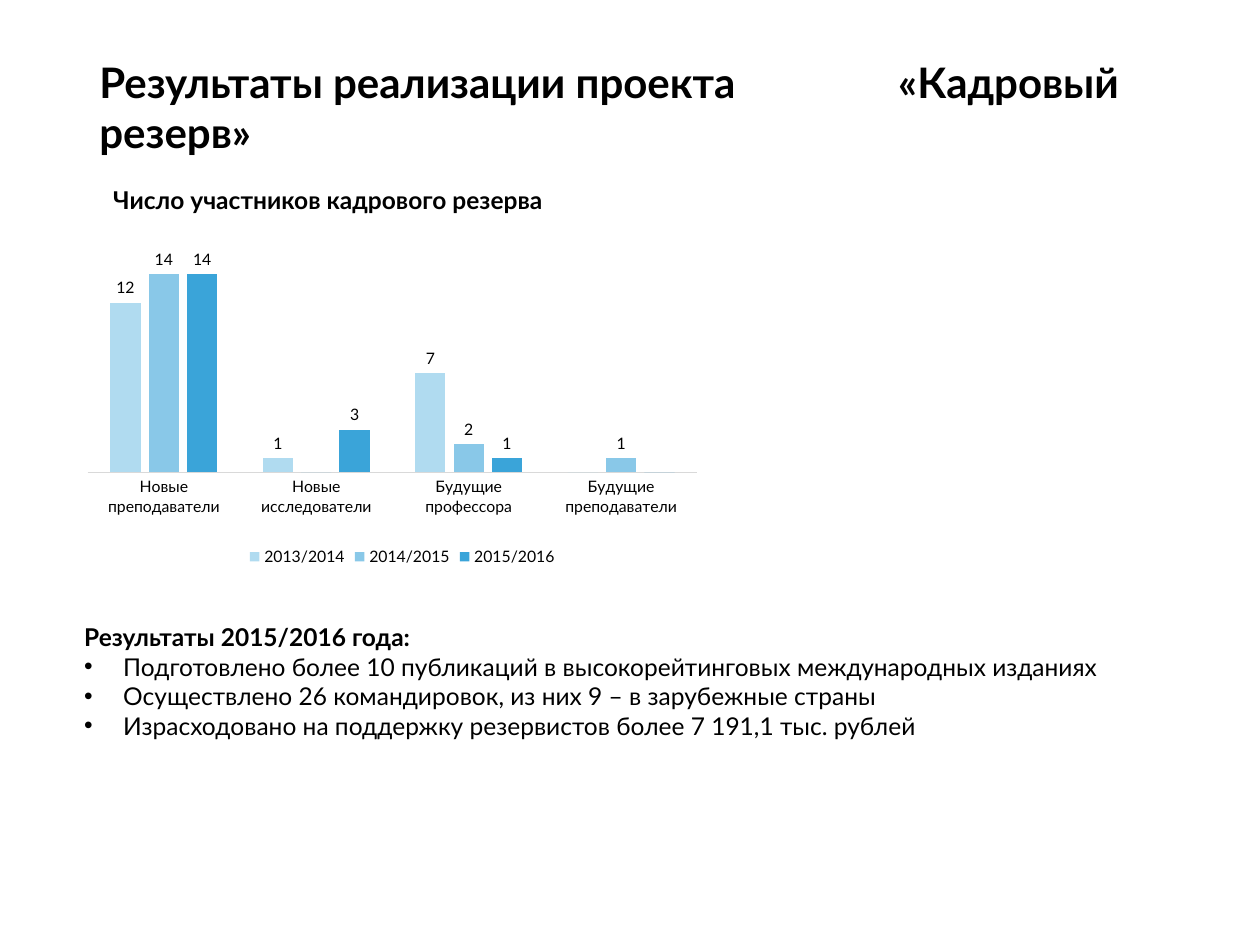
"""Build the slide on the results of the personnel reserve project."""
from pptx import Presentation, util as u
from pptx.chart import data
from pptx.dml.color import RGBColor
from pptx.enum import chart as ch, text as tx
from pptx.oxml import parse_xml
from pptx.oxml.ns import nsdecls, qn

COLORS = {"ink": "000000", "axis": "D9D9D9", "2013/2014": "B0DBF0",
          "2014/2015": "89C8E8", "2015/2016": "3AA4D9"}

deck = Presentation()
deck.slide_width, deck.slide_height = u.Inches(10), u.Inches(7.5)
slide = deck.slides.add_slide(deck.slide_layouts[6])


def area(left, top, width, height):
    across, down = deck.slide_width, deck.slide_height
    return [int(share * side) for share, side in
            zip((left, top, width, height), (across, down, across, down))]


def style(font, size, bold=False):
    for name, value in {"name": "Lato", "size": u.Pt(size), "bold": bold}.items():
        setattr(font, name, value)
    font.color.rgb = RGBColor.from_string(COLORS["ink"])


texts = [
    (area(0.069, 0.053, 0.862, 0.07), 24, True, tx.PP_ALIGN.LEFT,
     ["Результаты реализации проекта\t«Кадровый резерв»"]),
    (area(0.057, 0.652, 0.886, 0.139), 14, True, tx.PP_ALIGN.JUSTIFY,
     ["Результаты 2015/2016 года:",
      "Подготовлено более 10 публикаций в высокорейтинговых международных изданиях",
      "Осуществлено 26 командировок, из них 9 – в зарубежные страны",
      "Израсходовано на поддержку резервистов более 7 191,1 тыс. рублей"]),
    (area(0.08, 0.189, 0.406, 0.045), 14, False, tx.PP_ALIGN.LEFT,
     ["Число участников кадрового резерва"]),
]
for place, size, wrap, align, lines in texts:
    frame = slide.shapes.add_textbox(*place).text_frame
    frame.word_wrap = wrap
    for row, line in enumerate(lines):
        paragraph = frame.add_paragraph() if row else frame.paragraphs[0]
        paragraph.alignment = align
        run = paragraph.add_run()
        run.text = line
        style(run.font, size, bold=row == 0)
        props = paragraph._p.get_or_add_pPr()
        if row:
            props.set("marL", str(u.Inches(0.31)))
            props.set("indent", str(-u.Inches(0.31)))
            props.append(parse_xml(f'<a:buFont {nsdecls("a")} typeface="Arial"/>'))
            props.append(parse_xml(f'<a:buChar {nsdecls("a")} char="•"/>'))
        elif "\t" in line:
            props.append(parse_xml(f'<a:tabLst {nsdecls("a")}>'
                                   f'<a:tab pos="{u.Inches(6.34)}" algn="l"/></a:tabLst>'))

members = data.CategoryChartData()
members.categories = ["Новые преподаватели", "Новые исследователи",
                      "Будущие профессора", "Будущие преподаватели"]
for year, counts in {"2013/2014": (12, 1, 7, 0), "2014/2015": (14, 0, 2, 1),
                     "2015/2016": (14, 3, 1, 0)}.items():
    members.add_series(year, counts)
chart = slide.shapes.add_chart(ch.XL_CHART_TYPE.COLUMN_CLUSTERED,
                               *area(0.069, 0.24, 0.5, 0.365), members).chart
style(chart.font, 10)
chart.has_title = False
chart.has_legend = True
chart.legend.position = ch.XL_LEGEND_POSITION.BOTTOM
chart.legend.include_in_layout = False
style(chart.legend.font, 9)

groups, scale = chart.category_axis, chart.value_axis
groups.major_tick_mark = groups.minor_tick_mark = ch.XL_TICK_MARK.NONE
groups.format.line.width = u.Pt(0.75)
groups.format.line.color.rgb = RGBColor.from_string(COLORS["axis"])
style(groups.tick_labels.font, 9)
for name, value in {"visible": False, "has_major_gridlines": False,
                    "minimum_scale": 0, "maximum_scale": 16}.items():
    setattr(scale, name, value)

plot = chart.plots[0]
for name, value in {"gap_width": 151, "overlap": -27, "vary_by_categories": False}.items():
    setattr(plot, name, value)
for series in plot.series:
    series.format.fill.solid()
    series.format.fill.fore_color.rgb = RGBColor.from_string(COLORS[series.name])
    labels = series.data_labels
    for name, value in {"show_value": True, "number_format": "0;;",
                        "number_format_is_linked": False,
                        "position": ch.XL_LABEL_POSITION.OUTSIDE_END}.items():
        setattr(labels, name, value)
    style(labels.font, 9)

plot_area = chart._chartSpace.chart.plotArea
for default in plot_area.findall(qn("c:layout")):
    plot_area.remove(default)
bounds = "".join(f'<c:{side}Mode val="edge"/>' for side in "xy") + "".join(
    f'<c:{side} val="{share}"/>' for side, share in
    {"x": 0, "y": 0.056, "w": 0.969, "h": 0.656}.items())
plot_area.insert(0, parse_xml(f'<c:layout {nsdecls("c")}><c:manualLayout>'
                              f'<c:layoutTarget val="inner"/>{bounds}'
                              '</c:manualLayout></c:layout>'))

deck.save("out.pptx")
